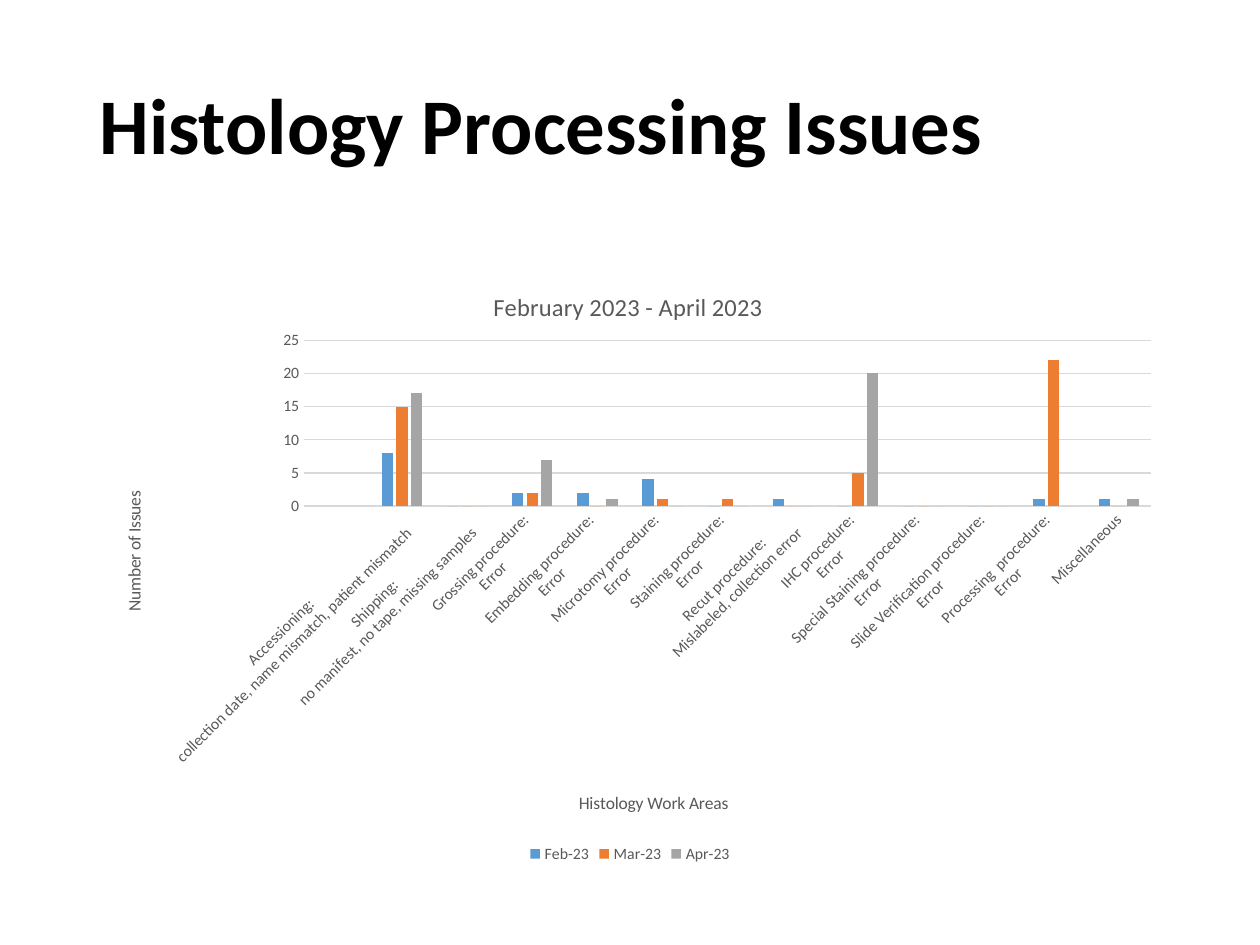
from lxml.etree import SubElement
from pptx import Presentation
from pptx.chart.data import CategoryChartData
from pptx.dml.color import RGBColor
from pptx.enum.chart import XL_CHART_TYPE, XL_LEGEND_POSITION, XL_TICK_MARK
from pptx.enum.text import MSO_ANCHOR, PP_ALIGN
from pptx.oxml.ns import qn
from pptx.util import Inches, Pt

GRAY = "595959"
PALE = "D9D9D9"
AREAS = [
    "",
    "Accessioning:\ncollection date, name mismatch, patient mismatch",
    "Shipping:\nno manifest, no tape, missing samples",
    "Grossing procedure:\nError",
    "Embedding procedure:\nError",
    "Microtomy procedure:\nError",
    "Staining procedure:\nError",
    "Recut procedure:\nMislabeled, collection error",
    "IHC procedure:\nError",
    "Special Staining procedure:\nError",
    "Slide Verification procedure:\nError",
    "Processing  procedure:\nError",
    "Miscellaneous",
]
MONTHS = {
    "Feb-23": ("5B9BD5", [None, 8, 0, 2, 2, 4, 0, 1, 0, 0, 0, 1, 1]),
    "Mar-23": ("ED7D31", [None, 15, 0, 2, 0, 1, 1, 0, 5, 0, 0, 22, 0]),
    "Apr-23": ("A5A5A5", [None, 17, 0, 7, 1, 0, 0, 0, 20, 0, 0, 0, 1]),
}


def color(code):
    return RGBColor.from_string(code)


def style(font, size, code=GRAY, bold=False):
    values = {"name": "Calibri", "size": Pt(size), "bold": bold}
    for key, value in values.items():
        setattr(font, key, value)
    font.color.rgb = color(code)


def stroke(line):
    line.color.rgb = color(PALE)
    line.width = Pt(0.75)


def locate(node, index, **spots):
    for old in node.findall(qn("c:layout")):
        node.remove(old)
    layout = SubElement(node, qn("c:layout"))
    node.insert(index, layout)
    manual = SubElement(layout, qn("c:manualLayout"))
    for key, value in spots.items():
        SubElement(manual, qn(f"c:{key}")).set("val", str(value))


def label(title, text, size, x, y, turn=0):
    frame = title.text_frame
    frame.text = text
    style(frame.paragraphs[0].runs[0].font, size)
    body = frame._txBody.find(qn("a:bodyPr"))
    body.set("rot", str(turn * 60000))
    body.set("vert", "horz")
    locate(title._element, 1, xMode="edge", yMode="edge", x=x, y=y)


def draw_title(slide, box):
    title = slide.shapes.title
    title.left, title.top, title.width, title.height = box
    frame = title.text_frame
    frame.text = "Histology Processing Issues"
    frame.word_wrap = True
    frame.vertical_anchor = MSO_ANCHOR.MIDDLE
    line = frame.paragraphs[0]
    line.alignment = PP_ALIGN.LEFT
    line.line_spacing = 0.9
    style(line.runs[0].font, 45, "000000", True)


def draw_axes(chart):
    areas, count = chart.category_axis, chart.value_axis
    for axis in (areas, count):
        axis.major_tick_mark = XL_TICK_MARK.NONE
        axis.minor_tick_mark = XL_TICK_MARK.NONE
        style(axis.tick_labels.font, 9)
    stroke(areas.format.line)
    body = areas._element.find(qn("c:txPr")).find(qn("a:bodyPr"))
    body.set("rot", str(-45 * 60000))
    body.set("vert", "horz")
    count.format.line.fill.background()
    count.minimum_scale, count.maximum_scale, count.major_unit = 0, 25, 5
    count.has_major_gridlines = True
    stroke(count.major_gridlines.format.line)
    label(areas.axis_title, "Histology Work Areas", 10, 0.45, 0.87)
    label(count.axis_title, "Number of Issues", 10, 0.03, 0.38, -90)


def draw_chart(slide, box):
    data = CategoryChartData()
    data.categories = AREAS
    for name, (code, values) in MONTHS.items():
        data.add_series(name, values)
    chart = slide.shapes.add_chart(XL_CHART_TYPE.COLUMN_CLUSTERED, *box, data).chart
    style(chart.font, 10, "000000")
    label(chart.chart_title, "February 2023 - April 2023", 14, 0.37, 0.05)
    plot = chart.plots[0]
    for key, value in {"gap_width": 219, "overlap": -27, "vary_by_categories": False}.items():
        setattr(plot, key, value)
    for series, (code, values) in zip(plot.series, MONTHS.values()):
        series.format.fill.solid()
        series.format.fill.fore_color.rgb = color(code)
    draw_axes(chart)
    chart.has_legend = True
    chart.legend.position = XL_LEGEND_POSITION.BOTTOM
    chart.legend.include_in_layout = False
    style(chart.legend.font, 9)
    area = chart._chartSpace.chart.plotArea
    locate(area, 0, layoutTarget="inner", xMode="edge", yMode="edge", x=0.2, y=0.14, w=0.78, h=0.27)


def main():
    deck = Presentation()
    deck.slide_width, deck.slide_height = Inches(10), Inches(7.5)
    slide = deck.slides.add_slide(deck.slide_layouts[5])
    left, wide = Inches(0.69), Inches(8.62)
    draw_title(slide, (left, Inches(0.2), wide, Inches(1.65)))
    draw_chart(slide, (left, Inches(2.02), wide, Inches(4.87)))
    deck.save("out.pptx")


if __name__ == "__main__":
    main()
